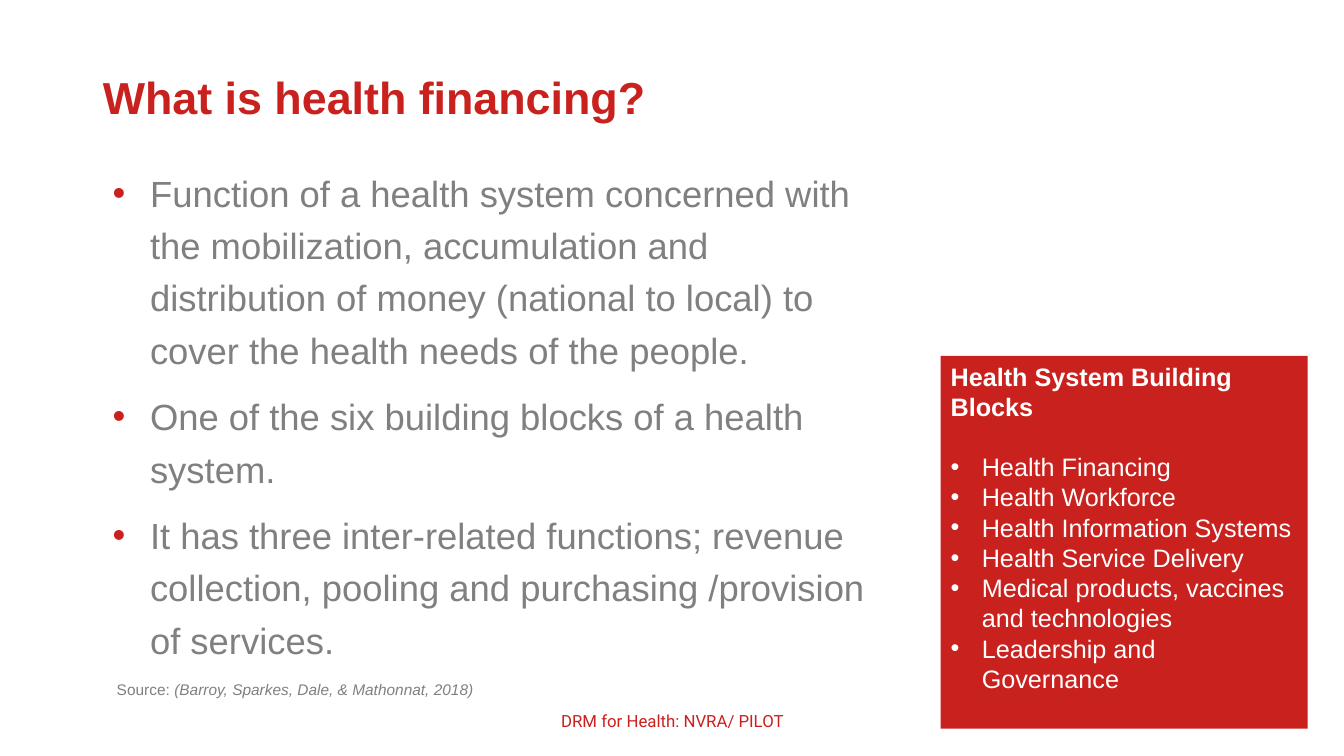
from dataclasses import dataclass

from lxml import etree
from pptx import Presentation
from pptx.dml.color import RGBColor
from pptx.enum.shapes import MSO_SHAPE
from pptx.enum.text import MSO_ANCHOR, MSO_AUTO_SIZE, PP_ALIGN
from pptx.oxml.ns import qn
from pptx.util import Emu, Inches, Pt

RECT = MSO_SHAPE.RECTANGLE
TOP, MIDDLE = MSO_ANCHOR.TOP, MSO_ANCHOR.MIDDLE
LEFT, CENTER = PP_ALIGN.LEFT, PP_ALIGN.CENTER
NO_FIT = MSO_AUTO_SIZE.NONE

WIDE, HIGH = Inches(13.33), Inches(7.5)
RED, GRAY, WHITE = "C9211E", "808080", "FFFFFF"

POINTS = [
    "Function of a health system concerned with the mobilization, accumulation "
    "and distribution of money (national to local) to cover the health needs of the people.",
    "One of the six building blocks of a health system.",
    "It has three inter-related functions; revenue collection, pooling and "
    "purchasing /provision of services.",
]
BLOCKS = [
    "Health Financing",
    "Health Workforce",
    "Health Information Systems",
    "Health Service Delivery",
    "Medical products, vaccines and technologies",
    "Leadership and Governance",
]


@dataclass(frozen=True)
class Area:
    """Place on the slide, in percent of its width and height."""
    left: float
    top: float
    width: float
    height: float

    def box(self) -> tuple[Emu, Emu, Emu, Emu]:
        sides = (self.left, WIDE), (self.top, HIGH), (self.width, WIDE), (self.height, HIGH)
        return tuple(Emu(round(share * full / 100)) for share, full in sides)


@dataclass(frozen=True)
class Bullet:
    color: str
    left: float
    hang: float


HEAD = Area(6.9, 5.33, 86.27, 15.73)
BODY = Area(7.58, 21.07, 58.36, 66.8)
SOURCE = Area(7.95, 89.33, 53.56, 3.73)
PANEL = Area(69.99, 47.07, 27.31, 49.33)
FOOT = Area(33.16, 92.67, 33.76, 5.33)


def rgb(code: str) -> RGBColor:
    return RGBColor.from_string(code)


def mark(para, bullet: Bullet) -> None:
    """Give a paragraph a hanging bullet."""
    props = para._p.get_or_add_pPr()
    props.set("marL", str(Inches(bullet.left)))
    props.set("indent", str(-Inches(bullet.hang)))
    tint = etree.SubElement(props, qn("a:buClr"))
    etree.SubElement(tint, qn("a:srgbClr"), val=bullet.color)
    etree.SubElement(props, qn("a:buFont"), typeface="Arial")
    etree.SubElement(props, qn("a:buChar"), char="•")


def write(para, text: str, *, size: float, color: str, font: str = "Arial",
          bold: bool = False, italic: bool = False, align: PP_ALIGN = LEFT,
          line: float = 1.0, after: float = 0, bullet: Bullet | None = None) -> None:
    run = para.add_run()
    run.text = text
    face = run.font
    face.name, face.size, face.bold, face.italic = font, Pt(size), bold, italic
    face.color.rgb = rgb(color)
    para.alignment, para.line_spacing = align, line
    para.space_before, para.space_after = Pt(0), Pt(after)
    if bullet:
        mark(para, bullet)


def frame(shape, anchor: MSO_ANCHOR):
    """Set up the text frame and return it."""
    text = shape.text_frame
    text.word_wrap, text.auto_size = True, NO_FIT
    text.vertical_anchor = anchor
    return text


def label(slide, area: Area, anchor: MSO_ANCHOR):
    return frame(slide.shapes.add_textbox(*area.box()), anchor).paragraphs[0]


def block(slide, area: Area, fill: str, anchor: MSO_ANCHOR):
    """Add a filled box without outline and return its text frame."""
    shape = slide.shapes.add_shape(RECT, *area.box())
    shape.shadow.inherit = False
    shape.fill.solid()
    shape.fill.fore_color.rgb = rgb(fill)
    shape.line.fill.background()
    return frame(shape, anchor)


def main() -> None:
    deck = Presentation()
    deck.slide_width, deck.slide_height = WIDE, HIGH
    slide = deck.slides.add_slide(deck.slide_layouts.get_by_name("Title Only"))

    write(label(slide, FOOT, MIDDLE), "DRM for Health: NVRA/ PILOT",
          size=12, color=RED, font="Roboto", align=CENTER)

    title = slide.shapes.title
    title.left, title.top, title.width, title.height = HEAD.box()
    write(frame(title, MIDDLE).paragraphs[0], "What is health financing?",
          size=32, color=RED, bold=True, line=0.9)

    body = block(slide, BODY, WHITE, MIDDLE)
    dot = Bullet(RED, 0.38, 0.37)
    for i, point in enumerate(POINTS):
        para = body.add_paragraph() if i else body.paragraphs[0]
        write(para, point, size=26, color=GRAY, line=1.2, after=10, bullet=dot)

    source = label(slide, SOURCE, TOP)
    write(source, "Source: ", size=11, color=GRAY)
    write(source, "(Barroy, Sparkes, Dale, & Mathonnat, 2018)", size=11, color=GRAY, italic=True)

    panel = block(slide, PANEL, RED, TOP)
    write(panel.paragraphs[0], "Health System Building Blocks",
          size=18, color=WHITE, bold=True, after=21.6)
    dot = Bullet(WHITE, 0.31, 0.31)
    for name in BLOCKS:
        write(panel.add_paragraph(), name, size=18, color=WHITE, bullet=dot)

    deck.save("out.pptx")


if __name__ == "__main__":
    main()
